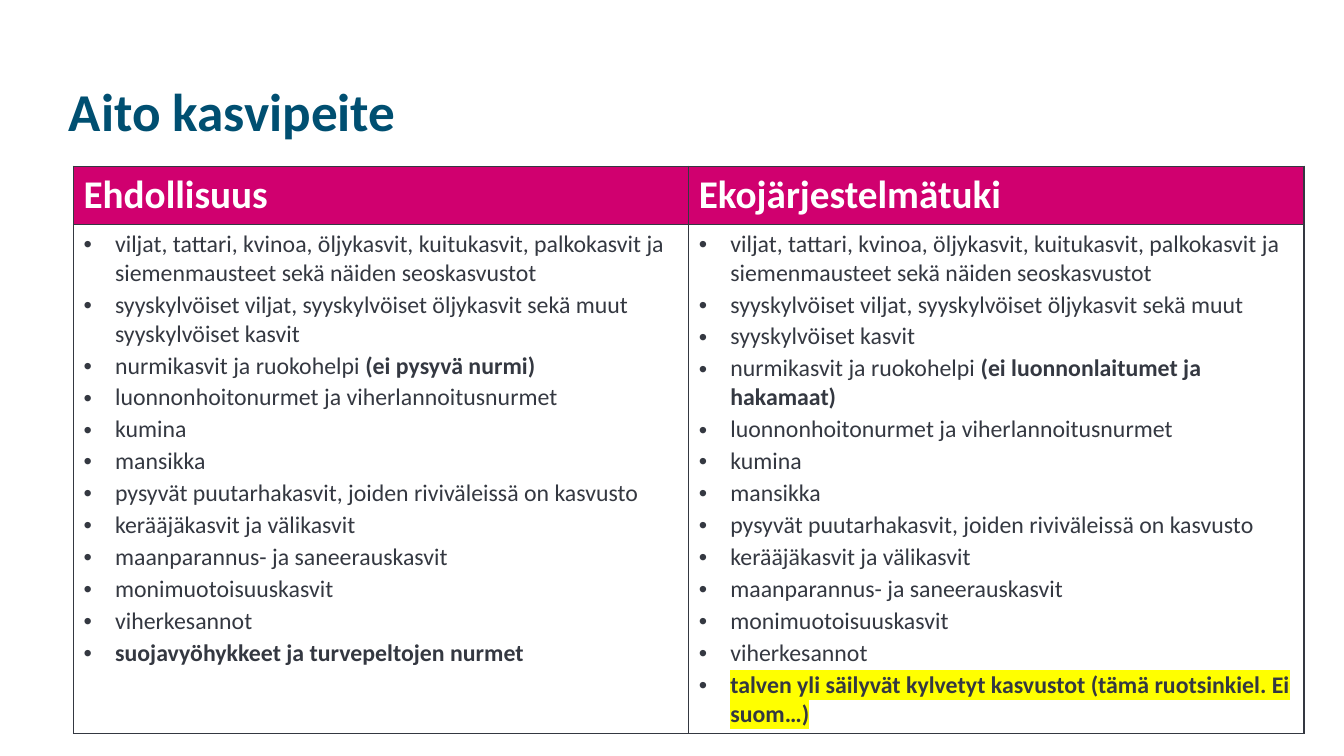
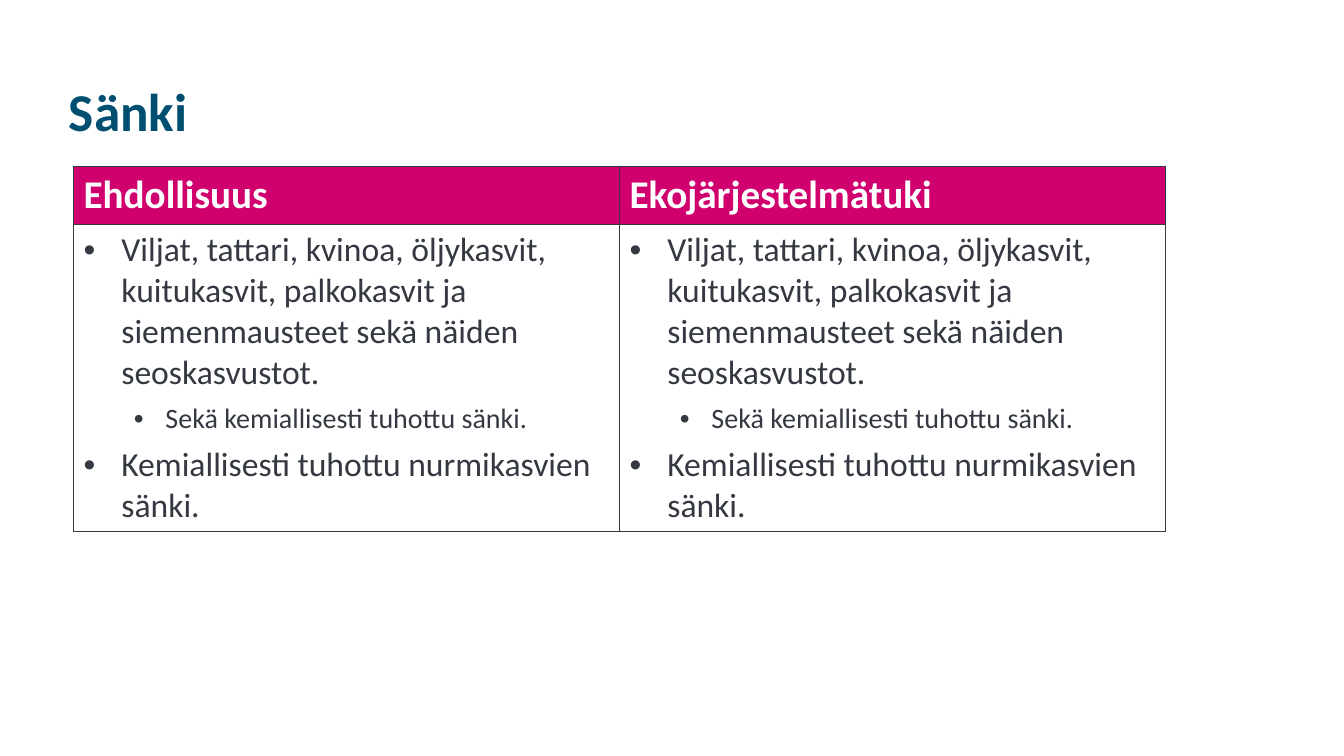
import pptx
import pptx.util
import pptx.dml.color
import pptx.enum.text
import pptx.oxml
import pptx.oxml.ns

Pt = pptx.util.Pt
TEAL, PINK, INK, WHITE, YELLOW = "004F71", "D0006F", "343841", "FFFFFF", "FFFF00"
FONT = "Calibri"
TITLE_BOX = (42, 29, 768, 104.4)
TITLE_FONT = {"name": FONT, "size": Pt(38), "bold": True}
HEAD_FONT = {"name": FONT, "size": Pt(28), "bold": True}
HEAD_HEIGHT = 41.4
TABLE_LEFT, TABLE_TOP = 52.5, 118.8
HEADINGS = ("Ehdollisuus", "Ekojärjestelmätuki")
NS = pptx.oxml.ns.nsdecls("a")

COVER_LEVELS = [{"size": 17, "left": 22.5, "hang": 22.5, "after": 2}]
STUBBLE_LEVELS = [
    {"size": 24, "left": 27, "hang": 27, "after": 6},
    {"size": 20, "left": 58.5, "hang": 22.5, "after": 6},
]

COVER_SHARED = [
    (0, [("luonnonhoitonurmet ja viherlannoitusnurmet", {})]),
    (0, [("kumina", {})]),
    (0, [("mansikka", {})]),
    (0, [("pysyvät puutarhakasvit, joiden riviväleissä on kasvusto", {})]),
    (0, [("kerääjäkasvit ja välikasvit", {})]),
    (0, [("maanparannus- ja saneerauskasvit", {})]),
    (0, [("monimuotoisuuskasvit", {})]),
    (0, [("viherkesannot", {})]),
]
COVER_CONDITIONAL = [
    (0, [("viljat, tattari, kvinoa, öljykasvit, kuitukasvit, palkokasvit ja "
          "siemenmausteet sekä näiden seoskasvustot", {})]),
    (0, [("syyskylvöiset viljat, syyskylvöiset öljykasvit sekä muut "
          "syyskylvöiset kasvit", {})]),
    (0, [("nurmikasvit ja ruokohelpi ", {}), ("(ei pysyvä nurmi)", {"bold": True})]),
    *COVER_SHARED,
    (0, [("suojavyöhykkeet ja turvepeltojen nurmet", {"bold": True})]),
]
COVER_ECO = [
    (0, [("viljat, tattari, kvinoa, öljykasvit, kuitukasvit, "
          "palkokasvit ja siemenmausteet sekä näiden seoskasvustot", {})]),
    (0, [("syyskylvöiset viljat, syyskylvöiset öljykasvit sekä muut", {})]),
    (0, [("syyskylvöiset kasvit", {})]),
    (0, [("nurmikasvit ja ruokohelpi ", {}),
         ("(ei luonnonlaitumet ja hakamaat)", {"bold": True})]),
    *COVER_SHARED,
    (0, [("talven yli säilyvät kylvetyt kasvustot (tämä ruotsinkiel. Ei suom…)",
          {"bold": True, "highlight": YELLOW})]),
]
STUBBLE = [
    (0, [("Viljat, tattari, kvinoa, öljykasvit, kuitukasvit, palkokasvit ja "
          "siemenmausteet sekä näiden seoskasvustot.", {})]),
    (1, [("Sekä kemiallisesti tuhottu sänki.", {})]),
    (0, [("Kemiallisesti tuhottu nurmikasvien sänki.", {})]),
]


def rgb(color):
    return pptx.dml.color.RGBColor.from_string(color)


def add_run(p, text, color, fmt):
    r = p.add_run()
    r.text = text
    r.font.color.rgb = rgb(color)
    for name, value in fmt.items():
        if name == "highlight":
            mark = pptx.oxml.parse_xml(
                f'<a:highlight {NS}><a:srgbClr val="{value}"/></a:highlight>')
            r.font.fill._xPr.find(pptx.oxml.ns.qn("a:solidFill")).addnext(mark)
        else:
            setattr(r.font, name, value)


def add_title(s, text, box):
    title = s.shapes.title
    for name, value in zip(("left", "top", "width", "height"), box):
        setattr(title, name, Pt(value))
    tf = title.text_frame
    tf.vertical_anchor = pptx.enum.text.MSO_ANCHOR.MIDDLE
    p = tf.paragraphs[0]
    p.alignment = pptx.enum.text.PP_ALIGN.LEFT
    p.line_spacing = Pt(40)
    add_run(p, text, TEAL, TITLE_FONT)


def style_cell(cell, fill):
    cell.fill.solid()
    cell.fill.fore_color.rgb = rgb(fill)
    tcPr = cell._tc.get_or_add_tcPr()
    for i, side in enumerate("LRTB"):
        tcPr.insert(i, pptx.oxml.parse_xml(
            f'<a:ln{side} {NS} w="{Pt(1)}"><a:solidFill><a:srgbClr val="{INK}"/>'
            f'</a:solidFill></a:ln{side}>'))


def fill_list(tf, items, levels):
    for i, (level, runs) in enumerate(items):
        p = tf.add_paragraph() if i else tf.paragraphs[0]
        look = levels[level]
        p.level = level
        pPr = p._p.get_or_add_pPr()
        pPr.set("marL", str(Pt(look["left"])))
        pPr.set("indent", str(-Pt(look["hang"])))
        for bullet in ('buFont {} typeface="Arial"', 'buChar {} char="•"'):
            pPr.append(pptx.oxml.parse_xml(f"<a:{bullet.format(NS)}/>"))
        p.space_after = Pt(look["after"])
        base = {"name": FONT, "size": Pt(look["size"]), "bold": False}
        for text, fmt in runs:
            add_run(p, text, INK, {**base, **fmt})


def add_comparison(s, box, columns, levels):
    left, top, width, height = box
    table = s.shapes.add_table(
        2, len(columns), Pt(left), Pt(top), Pt(width), Pt(height)).table
    table.horz_banding = False
    table.rows[0].height = Pt(HEAD_HEIGHT)
    table.rows[1].height = Pt(height - HEAD_HEIGHT)
    for i, (heading, items) in enumerate(zip(HEADINGS, columns)):
        table.columns[i].width = Pt(width / len(columns))
        head, body = table.cell(0, i), table.cell(1, i)
        style_cell(head, PINK)
        style_cell(body, WHITE)
        add_run(head.text_frame.paragraphs[0], heading, WHITE, HEAD_FONT)
        fill_list(body.text_frame, items, levels)


def add_comparison_slide(prs, title, size, columns, levels):
    s = prs.slides.add_slide(prs.slide_layouts[5])
    add_title(s, title, TITLE_BOX)
    add_comparison(s, (TABLE_LEFT, TABLE_TOP, *size), columns, levels)


def main():
    prs = pptx.Presentation()
    prs.slide_width, prs.slide_height = Pt(960), Pt(540)
    add_comparison_slide(prs, "Aito kasvipeite", (879, 398),
                         (COVER_CONDITIONAL, COVER_ECO), COVER_LEVELS)
    add_comparison_slide(prs, "Sänki", (780, 257),
                         (STUBBLE, STUBBLE), STUBBLE_LEVELS)
    prs.save("out.pptx")


if __name__ == "__main__":
    main()
